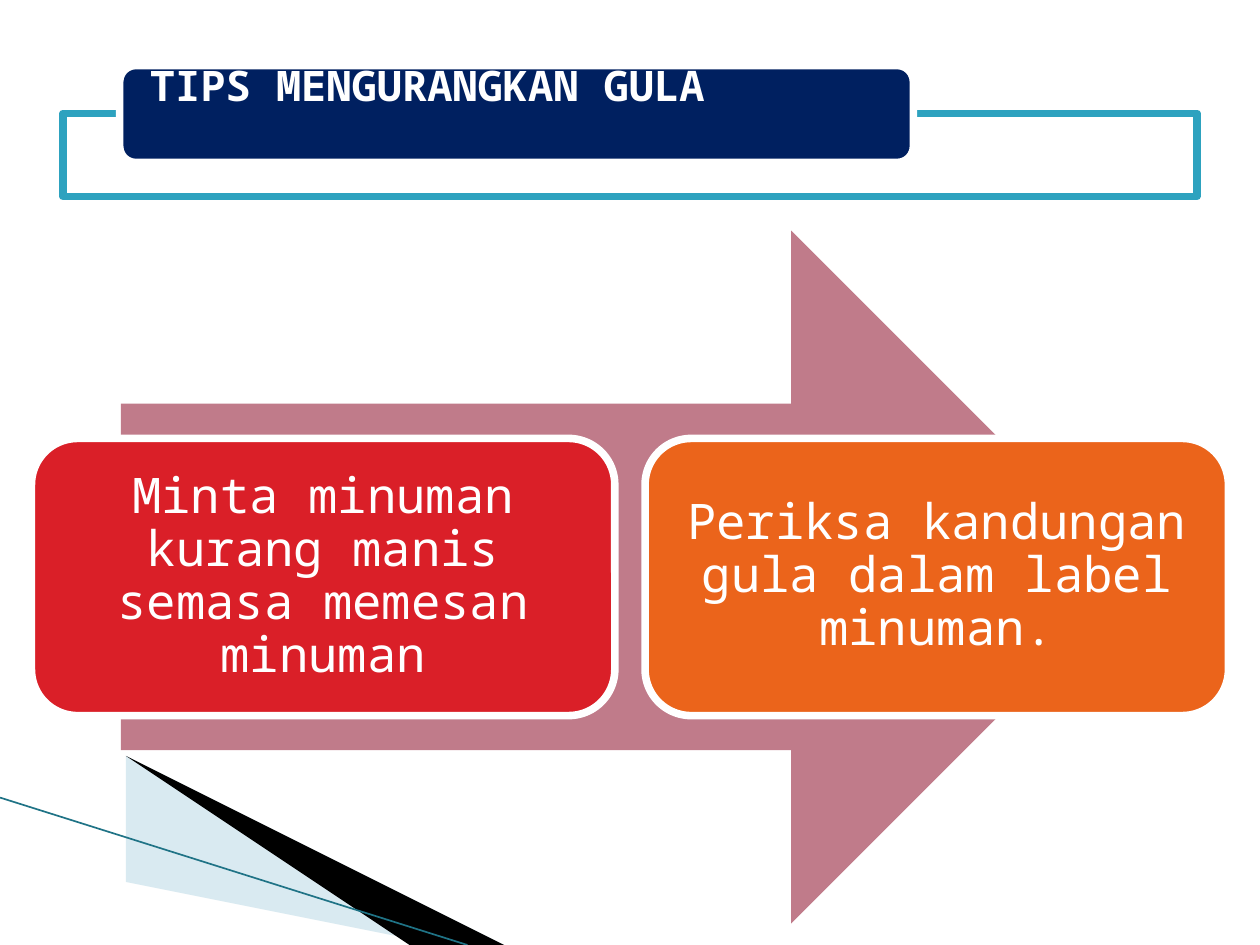
from dataclasses import dataclass

from lxml import etree
from pptx import Presentation
from pptx.dml.color import RGBColor
from pptx.enum.shapes import MSO_CONNECTOR, MSO_SHAPE
from pptx.enum.text import MSO_ANCHOR, MSO_AUTO_SIZE, PP_ALIGN
from pptx.oxml.ns import qn
from pptx.util import Inches, Pt

RECT, ROUND, ARROW = MSO_SHAPE.RECTANGLE, MSO_SHAPE.ROUNDED_RECTANGLE, MSO_SHAPE.RIGHT_ARROW
STRAIGHT = MSO_CONNECTOR.STRAIGHT
MIDDLE, TOP = MSO_ANCHOR.MIDDLE, MSO_ANCHOR.TOP
LEFT, CENTER = PP_ALIGN.LEFT, PP_ALIGN.CENTER
NO_FIT = MSO_AUTO_SIZE.NONE

FONT = "Noto Sans Mono"
WHITE = "FFFFFF"
BORDER = 4.33
WIDTH, HEIGHT = 10, 7.5
MARGIN, CARD_W, CARD_Y, CARD_H = 0.25, 4.63, 3.48, 2.2


@dataclass
class Box:
    x: float
    y: float
    w: float
    h: float

    def emu(self) -> list:
        return [Inches(v) for v in (self.x, self.y, self.w, self.h)]


@dataclass
class Tip:
    text: str
    color: str


@dataclass
class Wedge:
    points: list
    color: str
    alpha: int = 100


TIPS = [
    Tip("Minta minuman kurang manis semasa memesan minuman", "DA1F28"),
    Tip("Periksa kandungan gula dalam label minuman.", "EB641B"),
]
WEDGES = [
    Wedge([(0.55, 6.51), (5.95, HEIGHT), (4.56, HEIGHT), (0.55, 6.5)], "A0CBDC", 40),
    Wedge([(0.53, 6.49), (4.57, HEIGHT), (3.72, HEIGHT), (0.54, 6.5)], "000000"),
]
TITLE_BOX = Box(0.95, 0.52, 6.3, 0.77)


def rgb(color: str) -> RGBColor:
    return RGBColor.from_string(color)


def paint(sp, color: str, line: str = "", alpha: int = 100) -> None:
    sp.shadow.inherit = False
    sp.fill.solid()
    sp.fill.fore_color.rgb = rgb(color)
    if alpha < 100:
        clr = sp.element.spPr.find(qn("a:solidFill"))[0]
        etree.SubElement(clr, qn("a:alpha"), val=str(alpha * 1000))
    if line:
        sp.line.color.rgb = rgb(line)
        sp.line.width = Pt(BORDER)
    else:
        sp.line.fill.background()


def add_box(s, kind, box: Box, color: str, line: str = "", alpha: int = 100):
    sp = s.shapes.add_shape(kind, *box.emu())
    paint(sp, color, line, alpha)
    return sp


def write(sp, text: str, size: int, align, anchor, inset: tuple, bold: bool = False) -> None:
    tf = sp.text_frame
    tf.text = text
    tf.word_wrap = True
    tf.auto_size = NO_FIT
    tf.vertical_anchor = anchor
    tf.margin_left = tf.margin_right = Inches(inset[0])
    tf.margin_top = tf.margin_bottom = Inches(inset[1])
    p = tf.paragraphs[0]
    p.alignment = align
    p.line_spacing = 0.9
    p.space_before = Pt(0)
    font = p.runs[0].font
    font.name, font.size, font.bold = FONT, Pt(size), bold
    font.color.rgb = rgb(WHITE)


def add_wedge(s, wedge: Wedge) -> None:
    builder = s.shapes.build_freeform(*wedge.points[0], scale=Inches(1))
    builder.add_line_segments(wedge.points[1:], close=True)
    paint(builder.convert_to_shape(), wedge.color, alpha=wedge.alpha)


def add_edge(s, start: tuple, end: tuple, color: str) -> None:
    line = s.shapes.add_connector(STRAIGHT, *[Inches(v) for v in start + end])
    line.line.color.rgb = rgb(color)
    line.line.width = Pt(0.95)
    etree.SubElement(line.element.spPr, qn("a:effectLst"))


def main() -> None:
    prs = Presentation()
    prs.slide_width, prs.slide_height = Inches(WIDTH), Inches(HEIGHT)
    s = prs.slides.add_slide(prs.slide_layouts[5])

    # Corner decoration
    for wedge in WEDGES:
        add_wedge(s, wedge)
    add_edge(s, (0, 6.33), (3.71, HEIGHT), "1F7386")

    # Arrow with one card per tip, spread between the margins
    add_box(s, ARROW, Box(0.96, 1.83, 8.07, 5.5), "C07B8A")
    step = (WIDTH - 2 * MARGIN - CARD_W) / (len(TIPS) - 1)
    for i, tip in enumerate(TIPS):
        card = add_box(s, ROUND, Box(MARGIN + i * step, CARD_Y, CARD_W, CARD_H), tip.color, WHITE)
        write(card, tip.text, 28, CENTER, MIDDLE, (0.01, 0.01))

    # Title frame, label and title on top of them
    add_box(s, RECT, Box(0.5, 0.9, 9, 0.66), WHITE, "2DA2BF", alpha=90)
    add_box(s, ROUND, TITLE_BOX, "002060", WHITE)
    title = s.shapes.title
    title.left, title.top, title.width, title.height = TITLE_BOX.emu()
    write(title, "TIPS MENGURANGKAN GULA", 24, LEFT, TOP, (0.24, 0), bold=True)
    title.element.getparent().append(title.element)

    prs.save("out.pptx")


if __name__ == "__main__":
    main()
